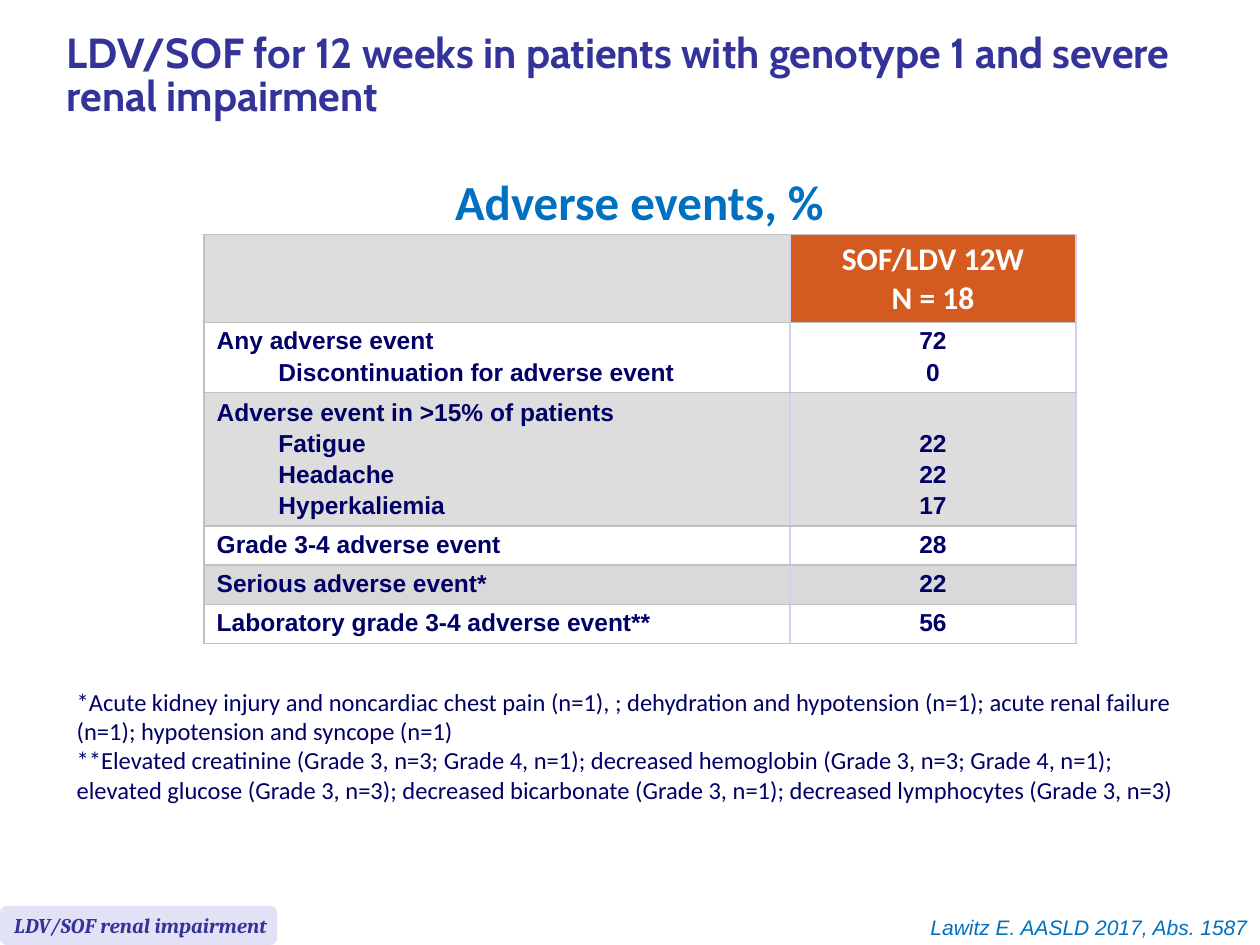
import pptx
import pptx.dml.color
import pptx.enum.shapes
import pptx.enum.text
import pptx.oxml
import pptx.oxml.ns
import pptx.util

Inches = pptx.util.Inches
Pt = pptx.util.Pt
ALIGN = pptx.enum.text.PP_ALIGN
ANCHOR = pptx.enum.text.MSO_ANCHOR


def color(hex_code):
    return pptx.dml.color.RGBColor.from_string(hex_code)


def write_lines(frame, lines, font, para_format):
    """Write one paragraph per line; later lines keep space_before."""
    font = dict(font)
    hex_code = font.pop("color")
    for index, line in enumerate(lines):
        para = frame.paragraphs[0] if index == 0 else frame.add_paragraph()
        for name, value in para_format.items():
            if name != "space_before" or index > 0:
                setattr(para, name, value)
        span = para.add_run()
        span.text = line
        for name, value in font.items():
            setattr(span.font, name, value)
        span.font.color.rgb = color(hex_code)


deck = pptx.Presentation()
deck.slide_width = Inches(10)
deck.slide_height = Inches(7.5)
page = deck.slides.add_slide(deck.slide_layouts[6])

# Title, table heading, reference and footnotes
text_boxes = [
    ((0.43, 0.08, 9.57, 1.07), ANCHOR.MIDDLE,
     ["LDV/SOF for 12 weeks in patients with genotype 1 and severe renal impairment"],
     {"name": "Cabin", "size": Pt(24), "bold": True, "color": "333399"},
     {"line_spacing": 0.85}),
    ((0.35, 1.31, 9.45, 0.55), ANCHOR.TOP,
     ["Adverse events, %"],
     {"name": "Calibri", "size": Pt(28), "bold": True, "color": "0070C0"},
     {"alignment": ALIGN.CENTER}),
    ((2.64, 7.21, 7.36, 0.3), ANCHOR.TOP,
     ["Lawitz E. AASLD 2017, Abs. 1587"],
     {"name": "Arial", "size": Pt(12), "italic": True, "color": "0070C0"},
     {"alignment": ALIGN.RIGHT}),
    ((0.51, 5.4, 8.98, 1.04), ANCHOR.TOP,
     ["*Acute kidney injury and noncardiac chest pain (n=1), ; dehydration and "
      "hypotension (n=1); acute renal failure (n=1); hypotension and syncope (n=1)",
      "**Elevated creatinine (Grade 3, n=3; Grade 4, n=1); decreased hemoglobin "
      "(Grade 3, n=3; Grade 4, n=1); elevated glucose (Grade 3, n=3); decreased "
      "bicarbonate (Grade 3, n=1); decreased lymphocytes (Grade 3, n=3)"],
     {"name": "Calibri", "size": Pt(14), "color": "000066"}, {}),
]
for place, anchor, lines, font, para_format in text_boxes:
    box = page.shapes.add_textbox(*map(Inches, place))
    box.text_frame.word_wrap = True
    box.text_frame.vertical_anchor = anchor
    write_lines(box.text_frame, lines, font, para_format)

# Adverse event table: row height, fill, labels, values
rows = [
    (0.7, "DDDDDD", [], ["SOF/LDV 12W", "N = 18"]),
    (0.55, "FFFFFF", ["Any adverse event", "Discontinuation for adverse event"], ["72", "0"]),
    (1.06, "DDDDDD", ["Adverse event in >15% of patients", "Fatigue", "Headache", "Hyperkaliemia"],
     ["22", "22", "17"]),
    (0.31, "FFFFFF", ["Grade 3-4 adverse event"], ["28"]),
    (0.31, "D9D9D9", ["Serious adverse event*"], ["22"]),
    (0.31, "FFFFFF", ["Laboratory grade 3-4 adverse event**"], ["56"]),
]
header_font = {"name": "Calibri", "size": Pt(18), "bold": True, "color": "FFFFFF"}
body_font = {"name": "Arial", "size": Pt(14), "bold": True, "color": "000066"}
body_spacing = {"line_spacing": Pt(15), "space_before": Pt(2.8)}

table_height = sum(row[0] for row in rows)
table = page.shapes.add_table(
    len(rows), 2, Inches(1.62), Inches(1.86), Inches(6.92), Inches(table_height)).table
table.first_row = False
table.horz_banding = False
for column, width in zip(table.columns, (4.65, 2.27)):
    column.width = Inches(width)

for row_index, (height, fill, labels, values) in enumerate(rows):
    table.rows[row_index].height = Inches(height)
    is_header = row_index == 0
    for column_index, lines in enumerate((labels, values)):
        cell = table.cell(row_index, column_index)
        # A value column shorter than its labels lines up with the last labels
        cell.vertical_anchor = ANCHOR.BOTTOM if len(values) < len(labels) else ANCHOR.MIDDLE
        para_format = {} if is_header else dict(body_spacing)
        if column_index == 1:
            para_format["alignment"] = ALIGN.CENTER
        write_lines(cell.text_frame, lines, header_font if is_header else body_font, para_format)
        if column_index == 0:
            for para in cell.text_frame.paragraphs[1:]:
                properties = para._p.get_or_add_pPr()
                properties.set("marL", str(Inches(0.49)))
                properties.set("indent", "0")

        left_color = "C0C0C0" if column_index == 0 else "D0D0F0"
        borders = {"lnL": left_color, "lnR": "D0D0F0", "lnT": "C0C0C0", "lnB": "C0C0C0"}
        cell_properties = cell._tc.get_or_add_tcPr()
        for tag, border_color in borders.items():
            cell_properties.append(pptx.oxml.parse_xml(
                f'<a:{tag} {pptx.oxml.ns.nsdecls("a")} w="{Pt(1)}"><a:solidFill>'
                f'<a:srgbClr val="{border_color}"/></a:solidFill></a:{tag}>'))
        cell.fill.solid()
        cell.fill.fore_color.rgb = color("D35B1F" if is_header and column_index == 1 else fill)

# Topic tag in the lower left corner
tag_shape = page.shapes.add_shape(
    pptx.enum.shapes.MSO_SHAPE.ROUNDED_RECTANGLE,
    Inches(0), Inches(7.19), Inches(2.2), Inches(0.31))
tag_shape.shadow.inherit = False
tag_shape.fill.solid()
tag_shape.fill.fore_color.rgb = color("E2E2F6")
tag_shape.line.fill.background()
tag_shape.text_frame.word_wrap = False
tag_shape.text_frame.vertical_anchor = ANCHOR.MIDDLE
write_lines(
    tag_shape.text_frame, ["LDV/SOF renal impairment"],
    {"name": "Cambria", "size": Pt(12), "bold": True, "italic": True, "color": "333399"},
    {"alignment": ALIGN.LEFT})

deck.save("out.pptx")
